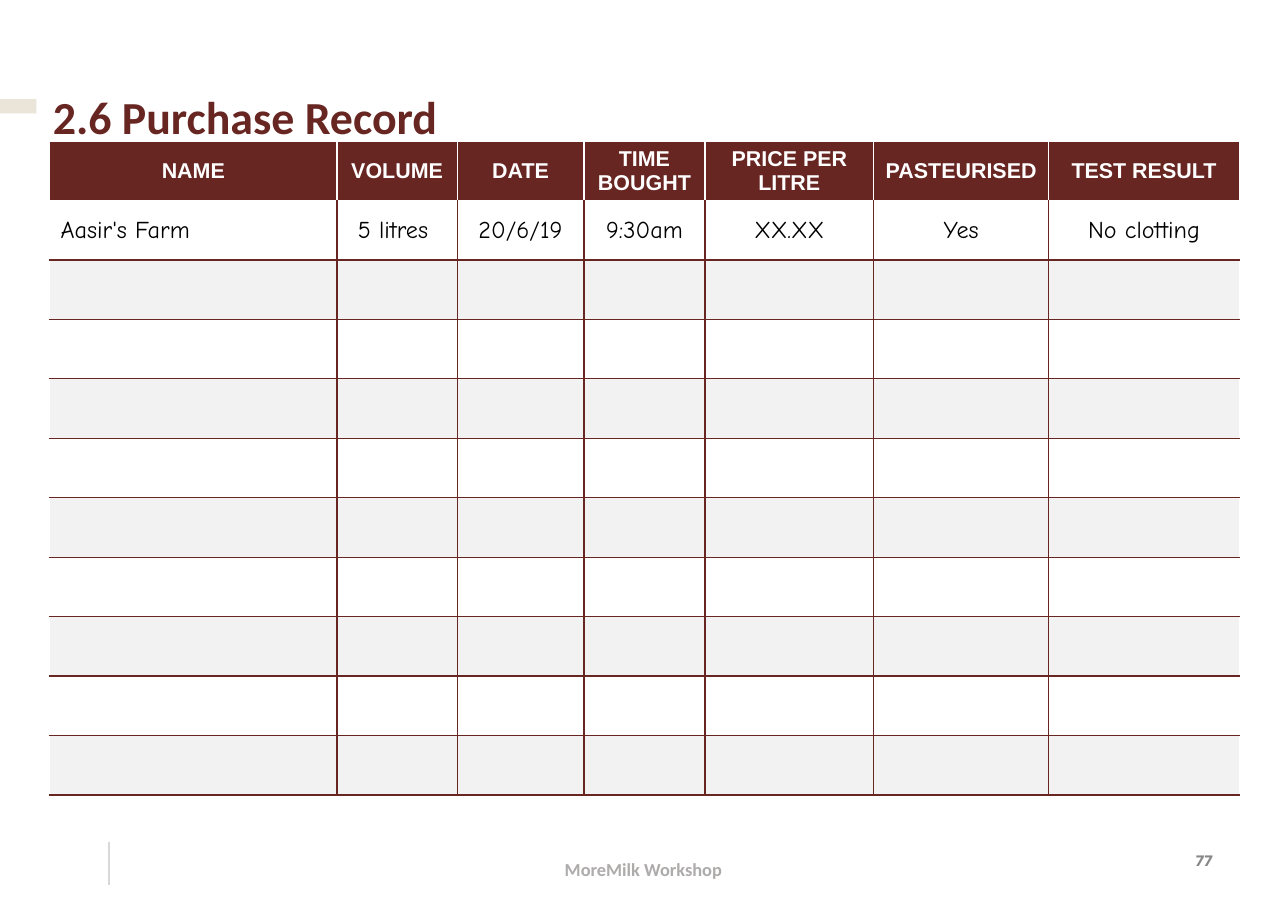
from dataclasses import dataclass

from lxml.etree import SubElement
from pptx import Presentation
from pptx.dml.color import RGBColor
from pptx.enum.shapes import MSO_CONNECTOR, MSO_SHAPE
from pptx.enum.text import MSO_ANCHOR as Anchor, MSO_AUTO_SIZE as Fit, PP_ALIGN as Align
from pptx.oxml.ns import qn
from pptx.util import Inches, Pt

HUES = {
    "wine": "682622",
    "white": "FFFFFF",
    "black": "000000",
    "band": "F2F2F2",
    "sand": "EAE4D9",
    "rule": "D8D8D8",
    "foot": "AEABAB",
    "page": "888888",
}


@dataclass
class Column:
    head: str
    width: float
    entry: str
    align: Align = Align.CENTER


@dataclass
class Block:
    left: float
    top: float
    width: float
    height: float
    fill: str
    turn: int = 0


@dataclass
class Note:
    left: float
    top: float
    width: float
    height: float
    text: str
    font: str
    size: float
    hue: str
    base: float


COLUMNS = [
    Column("NAME", 2.61, "Aasir's Farm", Align.LEFT),
    Column("VOLUME", 1.09, "5 litres "),
    Column("DATE", 1.15, "20/6/19"),
    Column("TIME BOUGHT", 1.1, "9:30am"),
    Column("PRICE PER LITRE", 1.53, "XX.XX"),
    Column("PASTEURISED", 1.59, "Yes"),
    Column("TEST RESULT", 1.73, "No clotting"),
]
ROWS, ROW_HIGH = 11, 0.54

BLOCKS = [
    Block(0, 7.49, 11.69, 0.78, "white"),
    Block(0.1, 0.8, 0.13, 0.33, "sand", 270),
]
NOTES = [
    Note(4.37, 7.59, 2.94, 0.55, "MoreMilk Workshop", "Calibri", 12, "foot", 0),
    Note(10.68, 7.61, 0.5, 0.4, "77", "League Spartan", 10.5, "page", 0.05),
]


def color(name: str) -> RGBColor:
    return RGBColor.from_string(HUES[name])


def write(frame, text: str, *, font: str, size: float, hue: str, bold: bool = False,
          align: Align = Align.CENTER, space: float = 1.0) -> None:
    para = frame.paragraphs[0]
    para.alignment, para.line_spacing = align, space
    run = para.add_run()
    run.text = text
    run.font.name, run.font.size, run.font.bold = font, Pt(size), bold
    run.font.color.rgb = color(hue)


def inset(frame, left: float, top: float, right: float, base: float) -> None:
    frame.margin_left, frame.margin_top = Inches(left), Inches(top)
    frame.margin_right, frame.margin_bottom = Inches(right), Inches(base)
    frame.word_wrap, frame.auto_size = True, Fit.NONE


def add_block(slide, item: Block) -> None:
    shape = slide.shapes.add_shape(
        MSO_SHAPE.RECTANGLE, Inches(item.left), Inches(item.top),
        Inches(item.width), Inches(item.height))
    shape.rotation = item.turn
    shape.shadow.inherit = False
    shape.fill.solid()
    shape.fill.fore_color.rgb = color(item.fill)
    shape.line.fill.background()


def add_note(slide, item: Note) -> None:
    frame = slide.shapes.add_textbox(
        Inches(item.left), Inches(item.top),
        Inches(item.width), Inches(item.height)).text_frame
    inset(frame, 0.1, 0.05, 0.1, item.base)
    frame.vertical_anchor = Anchor.MIDDLE
    write(frame, item.text, font=item.font, size=item.size, hue=item.hue, bold=True)


def add_rule(slide) -> None:
    line = slide.shapes.add_connector(
        MSO_CONNECTOR.STRAIGHT, Inches(0.99), Inches(7.64), Inches(0.99), Inches(8.03))
    line.line.color.rgb = color("rule")
    line.line.width = Pt(0.75)
    SubElement(line._element.spPr, qn("a:effectLst"))


def set_title(slide, text: str) -> None:
    title = slide.shapes.title
    title.left, title.top = Inches(0.28), Inches(0.16)
    title.width, title.height = Inches(10.97), Inches(1.13)
    frame = title.text_frame
    inset(frame, 0.2, 0.59, 0.1, 0.05)
    frame.vertical_anchor = Anchor.TOP
    write(frame, text, font="Calibri", size=30, hue="wine", bold=True,
          align=Align.LEFT, space=1.1)


def set_edges(cell, sides: str, hue: str) -> None:
    props = cell._tc.get_or_add_tcPr()
    for side in sides:
        edge = SubElement(props, qn(f"a:ln{side}"), w=str(Pt(1)))
        fill = SubElement(edge, qn("a:solidFill"))
        SubElement(fill, qn("a:srgbClr"), val=HUES[hue])


def edges(row: int, col: int) -> str:
    """Sides with a line: the outer left and right of the body stay open."""
    if row == 0:
        return "LRT"
    left = "L" if col > 0 else ""
    right = "R" if col < len(COLUMNS) - 1 else ""
    return left + right + ("T" if row > 1 else "") + "B"


def add_record(slide) -> None:
    wide = sum(col.width for col in COLUMNS)
    table = slide.shapes.add_table(
        ROWS, len(COLUMNS), Inches(0.45), Inches(1.28),
        Inches(wide), Inches(ROWS * ROW_HIGH)).table
    table.horz_banding = False
    for row in table.rows:
        row.height = Inches(ROW_HIGH)
    for c, col in enumerate(COLUMNS):
        table.columns[c].width = Inches(col.width)
        for r in range(ROWS):
            cell = table.cell(r, c)
            cell.vertical_anchor = Anchor.MIDDLE
            set_edges(cell, edges(r, c), "wine" if r else "white")
            cell.fill.solid()
            fill = "wine" if r == 0 else "white" if r % 2 else "band"
            cell.fill.fore_color.rgb = color(fill)
        write(table.cell(0, c).text_frame, col.head,
              font="Arial", size=14, hue="white", bold=True)
        write(table.cell(1, c).text_frame, col.entry,
              font="Comic Neue", size=15.8, hue="black", align=col.align)


def main() -> None:
    deck = Presentation()
    deck.slide_width, deck.slide_height = Inches(11.69), Inches(8.27)
    slide = deck.slides.add_slide(deck.slide_layouts[5])

    # Footer band and side mark
    for item in BLOCKS:
        add_block(slide, item)

    # Footer text and rule
    for item in NOTES:
        add_note(slide, item)
    add_rule(slide)

    # Title and purchase table
    set_title(slide, "2.6 Purchase Record")
    add_record(slide)

    deck.save("out.pptx")


if __name__ == "__main__":
    main()
